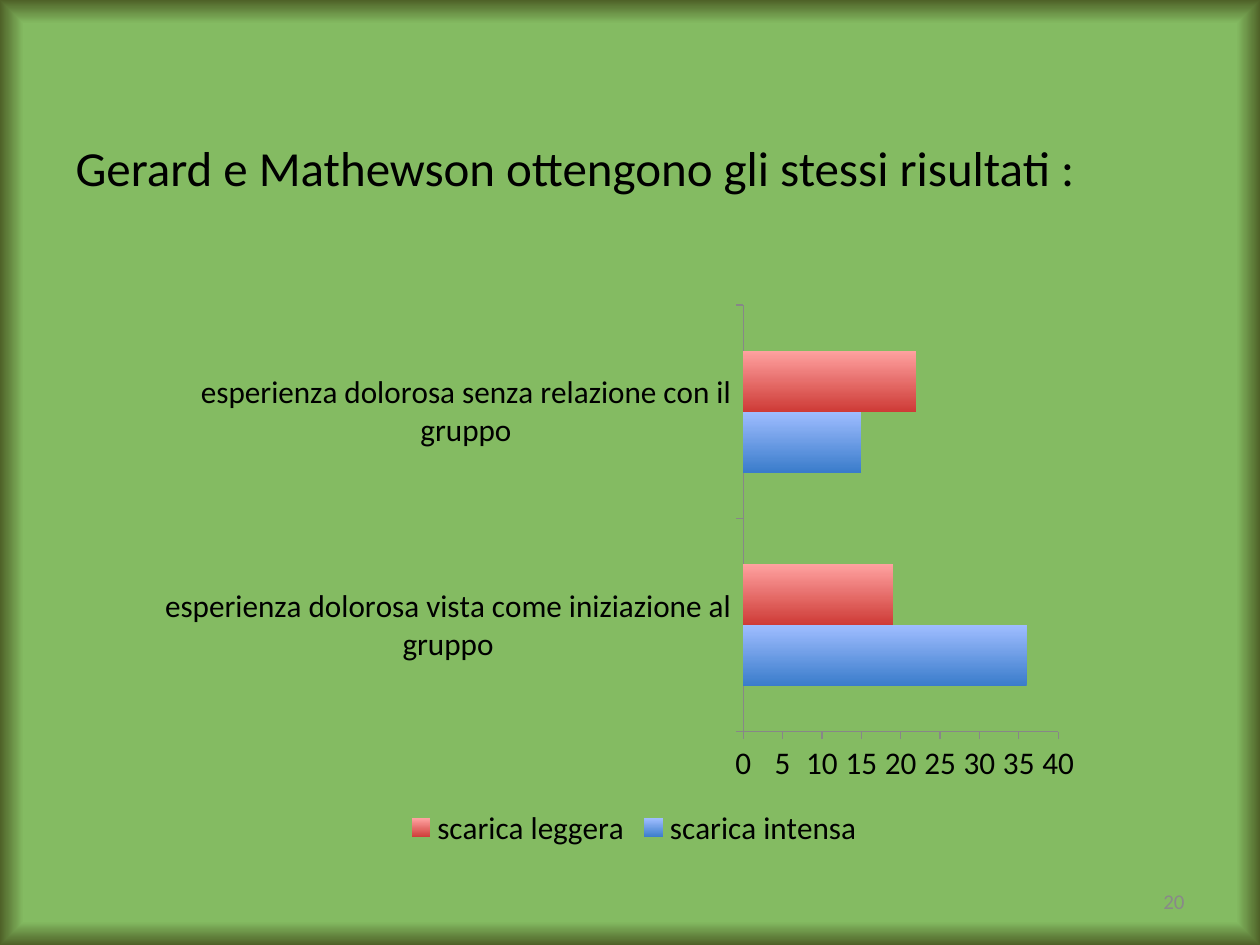
"""Build a slide comparing group ratings after light and intense shocks."""
from dataclasses import dataclass

import pptx
import pptx.chart.data
import pptx.dml.color
import pptx.enum.chart
import pptx.enum.text
import pptx.oxml
import pptx.oxml.ns
import pptx.util

COLORS = {
    "field": "84BB62", "edge": "4F6228", "text": "000000", "muted": "898989",
    "axis": "878787", "blue_light": "9FBDFF", "blue_dark": "3A7CCB",
    "red_light": "FFA2A0", "red_dark": "CE3B37",
}
FONT = "Calibri"
SLIDE_W, SLIDE_H = pptx.util.Inches(10), pptx.util.Inches(7.5)


@dataclass(frozen=True)
class Area:
    """A rectangle given as shares of the slide's size."""
    left: float
    top: float
    width: float
    height: float

    def lengths(self) -> tuple[int, int, int, int]:
        return (int(self.left * SLIDE_W), int(self.top * SLIDE_H),
                int(self.width * SLIDE_W), int(self.height * SLIDE_H))


@dataclass(frozen=True)
class Shock:
    """One chart series with its gradient colours."""
    name: str
    ratings: tuple[int, ...]
    light: str
    dark: str


HEADING_AREA = Area(0.05, 0.139, 0.9, 0.148)
CHART_AREA = Area(0.131, 0.311, 0.736, 0.592)
NUMBER_AREA = Area(0.717, 0.927, 0.233, 0.053)
EXPERIENCES = (
    "esperienza dolorosa vista come iniziazione al gruppo",
    "esperienza dolorosa senza relazione con il gruppo",
)
SHOCKS = (
    Shock("scarica intensa", (36, 15), "blue_light", "blue_dark"),
    Shock("scarica leggera", (19, 22), "red_light", "red_dark"),
)


def rgb(name: str) -> pptx.dml.color.RGBColor:
    return pptx.dml.color.RGBColor.from_string(COLORS[name])


def set_font(font, size: float, color: str) -> None:
    font.name, font.size, font.bold = FONT, pptx.util.Pt(size), False
    font.color.rgb = rgb(color)


def set_gradient(fill, *stops: tuple[float, str]) -> None:
    fill.gradient()
    for stop, (position, color) in zip(fill.gradient_stops, stops):
        stop.position = position
        stop.color.rgb = rgb(color)


def paint_background(slide) -> None:
    set_gradient(slide.background.fill, (0.95, "field"), (1, "edge"))
    linear = next(slide.background._cSld.iter(pptx.oxml.ns.qn("a:lin")))
    linear.getparent().replace(linear, pptx.oxml.parse_xml(
        f'<a:path {pptx.oxml.ns.nsdecls("a")} path="shape">'
        '<a:fillToRect l="50000" t="50000" r="50000" b="50000"/></a:path>'))


def write_text(shape, text: str, size: float, color: str, alignment, anchor):
    frame = shape.text_frame
    frame.word_wrap = True
    frame.auto_size = pptx.enum.text.MSO_AUTO_SIZE.NONE
    frame.vertical_anchor = anchor
    paragraph = frame.paragraphs[0]
    paragraph.alignment = alignment
    run = paragraph.add_run()
    run.text = text
    set_font(run.font, size, color)
    return paragraph


def add_heading(slide, text: str) -> None:
    heading = slide.shapes.title
    heading.left, heading.top, heading.width, heading.height = HEADING_AREA.lengths()
    paragraph = write_text(heading, text, 28, "text",
                           pptx.enum.text.PP_ALIGN.JUSTIFY,
                           pptx.enum.text.MSO_ANCHOR.TOP)
    paragraph.space_before = pptx.util.Pt(5.6)


def format_axis(axis) -> None:
    axis.has_major_gridlines = False
    axis.major_tick_mark = pptx.enum.chart.XL_TICK_MARK.OUTSIDE
    axis.format.line.color.rgb = rgb("axis")
    axis.format.line.width = pptx.util.Pt(0.75)
    set_font(axis.tick_labels.font, 18, "text")


def add_ratings_chart(slide) -> None:
    ratings = pptx.chart.data.CategoryChartData()
    ratings.categories = EXPERIENCES
    for shock in SHOCKS:
        ratings.add_series(shock.name, shock.ratings)
    chart = slide.shapes.add_chart(
        pptx.enum.chart.XL_CHART_TYPE.BAR_CLUSTERED,
        *CHART_AREA.lengths(), ratings).chart
    chart.has_title = False
    set_font(chart.font, 18, "text")
    chart.has_legend = True
    chart.legend.position = pptx.enum.chart.XL_LEGEND_POSITION.BOTTOM
    chart.legend.include_in_layout = False
    set_font(chart.legend.font, 18, "text")
    format_axis(chart.category_axis)
    format_axis(chart.value_axis)
    chart.value_axis.minimum_scale = 0
    chart.value_axis.maximum_scale = 40
    chart.value_axis.major_unit = 5
    bars = chart.plots[0]
    bars.vary_by_categories = False
    bars.gap_width, bars.overlap = 150, 0
    for series, shock in zip(bars.series, SHOCKS):
        set_gradient(series.format.fill, (0, shock.dark), (1, shock.light))
        series.format.fill.gradient_angle = 90


def add_slide_number(slide, number: str) -> None:
    write_text(slide.shapes.add_textbox(*NUMBER_AREA.lengths()), number, 12, "muted",
               pptx.enum.text.PP_ALIGN.RIGHT, pptx.enum.text.MSO_ANCHOR.MIDDLE)


def main() -> None:
    deck = pptx.Presentation()
    deck.slide_width, deck.slide_height = SLIDE_W, SLIDE_H
    slide = deck.slides.add_slide(deck.slide_layouts.get_by_name("Title Only"))
    paint_background(slide)
    add_heading(slide, "Gerard e Mathewson ottengono gli stessi risultati :")
    add_ratings_chart(slide)
    add_slide_number(slide, "20")
    deck.save("out.pptx")


if __name__ == "__main__":
    main()
